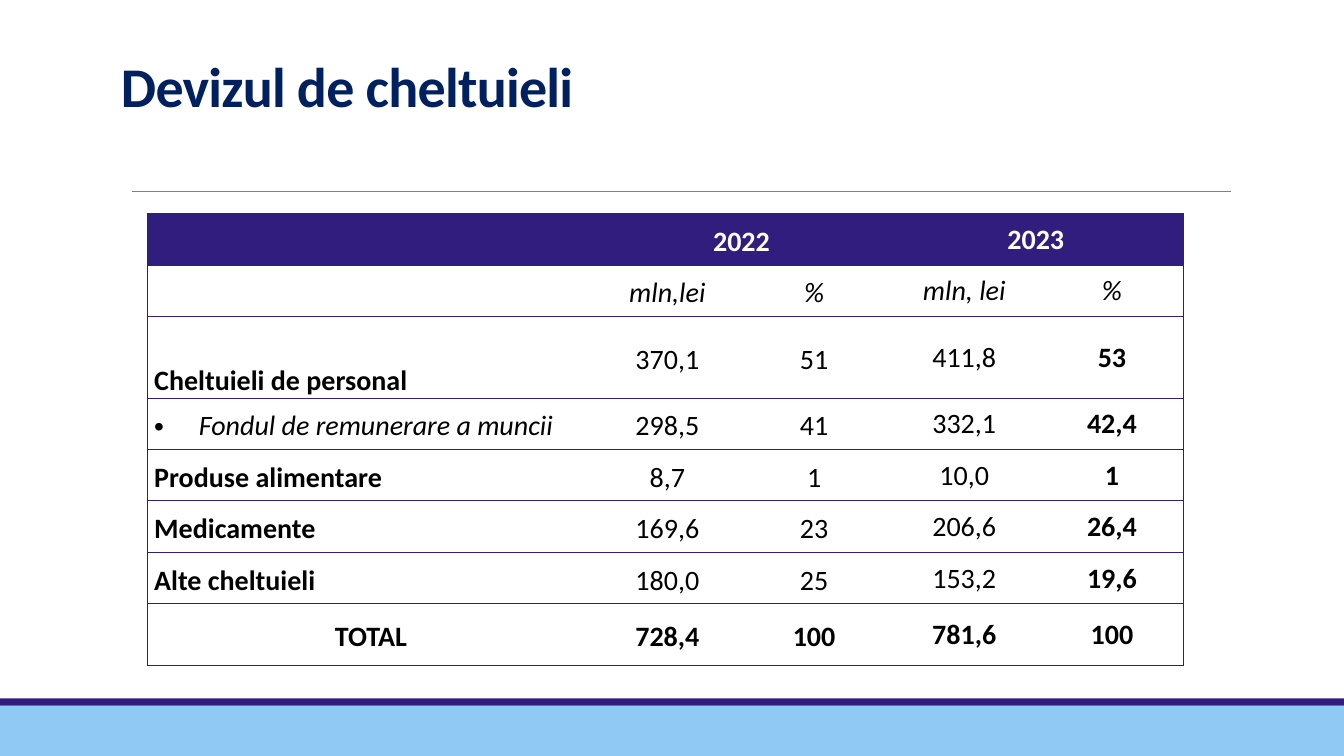
from dataclasses import dataclass

from lxml.etree import SubElement
from pptx import Presentation
from pptx.dml.color import RGBColor
from pptx.enum.shapes import MSO_CONNECTOR, MSO_SHAPE
from pptx.enum.text import MSO_ANCHOR, PP_ALIGN
from pptx.oxml.ns import qn
from pptx.util import Inches, Pt


@dataclass(frozen=True)
class Theme:
    """Colours, font and type sizes of the slide."""
    font: str = "Calibri"
    title_size: int = 40
    table_size: int = 20
    navy: str = "002060"
    purple: str = "301D7D"
    sky: str = "8FC9F4"
    grey: str = "808080"
    black: str = "000000"
    white: str = "FFFFFF"


THEME = Theme()
COLUMN_WIDTHS = (4.44, 1.44, 1.47, 1.51, 1.42)
ROW_HEIGHTS = (0.51, 0.51, 0.81, 0.51, 0.51, 0.51, 0.51, 0.61)
EXPENSES = (
    ("", "2022", "", "2023", ""),
    ("", "mln,lei", "%", "mln, lei", "%"),
    ("Cheltuieli de personal", "370,1", "51", "411,8", "53"),
    (" Fondul de remunerare a muncii", "298,5", "41", "332,1", "42,4"),
    ("Produse alimentare", "8,7", "1", "10,0", "1"),
    ("Medicamente", "169,6", "23", "206,6", "26,4"),
    ("Alte cheltuieli", "180,0", "25", "153,2", "19,6"),
    ("TOTAL", "728,4", "100", "781,6", "100"),
)
HEADER, UNITS, PERSONNEL, SALARY_FUND, TOTAL = 0, 1, 2, 3, 7
LABEL, FIRST_2023, LAST = 0, 3, 4


def style_run(run, size, color, bold=False, italic=False):
    """Format one run in the theme font."""
    run.font.name = THEME.font
    run.font.size = Pt(size)
    run.font.bold = bold
    run.font.italic = italic
    run.font.color.rgb = RGBColor.from_string(color)


def add_band(slide, top, height, color):
    """Draw a full-width footer band."""
    band = slide.shapes.add_shape(
        MSO_SHAPE.RECTANGLE, 0, Inches(top), Inches(13.33), Inches(height))
    band.shadow.inherit = False
    band.fill.solid()
    band.fill.fore_color.rgb = RGBColor.from_string(color)
    band.line.fill.background()


def add_rule(slide):
    """Draw the thin rule under the title."""
    rule = slide.shapes.add_connector(
        MSO_CONNECTOR.STRAIGHT,
        Inches(1.31), Inches(1.9), Inches(12.21), Inches(1.9))
    rule.line.color.rgb = RGBColor.from_string(THEME.grey)
    rule.line.width = Pt(0.5)
    SubElement(rule._element.spPr, qn("a:effectLst"))


def set_title(slide, wording):
    """Place and format the title."""
    title = slide.shapes.title
    title.left, title.top = Inches(1.1), Inches(0.27)
    title.width, title.height = Inches(11), Inches(0.96)
    title.text_frame.text = wording
    title.text_frame.vertical_anchor = MSO_ANCHOR.BOTTOM
    heading = title.text_frame.paragraphs[0]
    heading.alignment = PP_ALIGN.LEFT
    heading.line_spacing = 0.85
    style_run(heading.runs[0], THEME.title_size, THEME.navy, bold=True)
    heading.runs[0]._r.get_or_add_rPr().set("spc", "-50")


def set_borders(cell, column):
    """Rule the cell above and below, and at the table's outer sides."""
    visible = {"L": column == LABEL, "R": column == LAST, "T": True, "B": True}
    for side, shown in visible.items():
        border = SubElement(cell._tc.get_or_add_tcPr(), qn(f"a:ln{side}"), w=str(Pt(1)))
        if shown:
            paint = SubElement(border, qn("a:solidFill"))
            SubElement(paint, qn("a:srgbClr"), val=THEME.purple)
        else:
            SubElement(border, qn("a:noFill"))


def add_bullet(paragraph):
    """Give the paragraph a hanging round bullet."""
    properties = paragraph._p.get_or_add_pPr()
    properties.set("marL", str(Inches(0.38)))
    properties.set("indent", str(-Inches(0.38)))
    SubElement(properties, qn("a:buFont"), typeface="Arial")
    SubElement(properties, qn("a:buChar"), char="•")


def format_cell(cell, row, column):
    """Set margins, borders, fill and text style by position in the table."""
    is_2023 = column >= FIRST_2023
    side_margin = Inches(0.01 if is_2023 else 0.07)
    cell.margin_left = cell.margin_right = side_margin
    cell.margin_top = Inches(0.01 if is_2023 else 0)
    cell.margin_bottom = 0
    cell.vertical_anchor = MSO_ANCHOR.MIDDLE
    set_borders(cell, column)
    if row == HEADER:
        cell.fill.solid()
        cell.fill.fore_color.rgb = RGBColor.from_string(THEME.purple)
    else:
        cell.fill.background()

    entry = cell.text_frame.paragraphs[0]
    is_item = column == LABEL and row != TOTAL
    entry.alignment = PP_ALIGN.JUSTIFY if is_item else PP_ALIGN.CENTER
    entry.line_spacing = 1.0 if is_2023 else 1.15
    is_fund = (row, column) == (SALARY_FUND, LABEL)
    if is_fund:
        add_bullet(entry)
    if (row, column) == (PERSONNEL, LABEL):
        cell.vertical_anchor = MSO_ANCHOR.BOTTOM
    strong = row in (HEADER, TOTAL) or (
        row != UNITS and column in (LABEL, LAST) and not is_fund)
    for run in entry.runs:
        style_run(run, THEME.table_size,
                  THEME.white if row == HEADER else THEME.black,
                  bold=strong, italic=row == UNITS or is_fund)


def add_expense_table(slide):
    """Build the table of expenses for both years."""
    frame = slide.shapes.add_table(
        len(ROW_HEIGHTS), len(COLUMN_WIDTHS), Inches(1.46), Inches(2.12),
        Inches(sum(COLUMN_WIDTHS)), Inches(sum(ROW_HEIGHTS)))
    expenses = frame.table
    expenses.first_row = expenses.horz_banding = False
    for column, width in zip(expenses.columns, COLUMN_WIDTHS):
        column.width = Inches(width)
    for row, height in zip(expenses.rows, ROW_HEIGHTS):
        row.height = Inches(height)
    for row, entries in enumerate(EXPENSES):
        for column, wording in enumerate(entries):
            cell = expenses.cell(row, column)
            cell.text_frame.text = wording
            format_cell(cell, row, column)
    for year_column in (1, FIRST_2023):
        expenses.cell(HEADER, year_column).merge(
            expenses.cell(HEADER, year_column + 1))


def main():
    """Build and save the slide."""
    deck = Presentation()
    deck.slide_width, deck.slide_height = Inches(13.33), Inches(7.5)
    slide = deck.slides.add_slide(deck.slide_layouts[5])
    add_band(slide, 7, 0.5, THEME.sky)
    add_band(slide, 6.93, 0.07, THEME.purple)
    add_rule(slide)
    set_title(slide, "Devizul de cheltuieli")
    add_expense_table(slide)
    deck.save("out.pptx")


if __name__ == "__main__":
    main()
